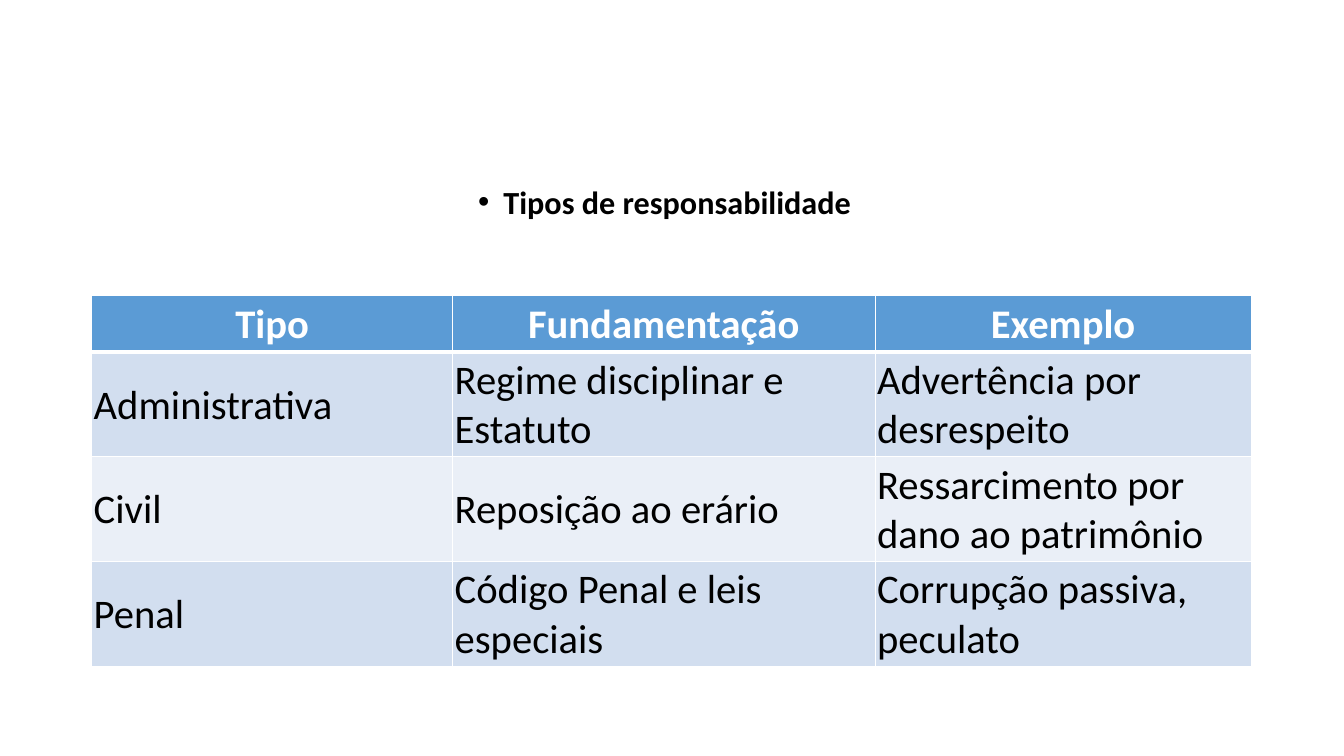
from lxml.etree import SubElement
from pptx import Presentation
from pptx.dml.color import RGBColor
from pptx.enum.text import MSO_ANCHOR as Anchor, PP_ALIGN as Align
from pptx.oxml.ns import qn
from pptx.util import Pt

PX = 9144
HEADING = "Tipos de responsabilidade"
RESPONSIBILITIES = [
    ["Tipo", "Fundamentação", "Exemplo"],
    ["Administrativa", "Regime disciplinar e Estatuto", "Advertência por desrespeito"],
    ["Civil", "Reposição ao erário", "Ressarcimento por dano ao patrimônio"],
    ["Penal", "Código Penal e leis especiais", "Corrupção passiva, peculato"],
]
COLUMN_WIDTHS = [358, 419, 373]
ROW_HEIGHTS = [56, 104, 104, 104]
HEADER_FILL, BAND_FILLS = "5B9BD5", ["EAEFF7", "D2DEEF"]
WHITE, BLACK = "FFFFFF", "000000"


def px(length):
    """Turn whole px into EMU."""
    return length * PX


def color(hex_code):
    """Turn a hex string into a colour."""
    return RGBColor.from_string(hex_code)


def apply(target, values):
    """Set each attribute of the target from a dict."""
    for key, value in values.items():
        setattr(target, key, value)


def style_font(paragraph, size, hex_code, bold):
    """Format the text of a paragraph."""
    apply(paragraph.font, {"name": "Calibri", "size": Pt(size), "bold": bold})
    paragraph.font.color.rgb = color(hex_code)


def add_border(cell, side, points):
    """Draw a white line on one side of a cell."""
    line = SubElement(cell._tc.get_or_add_tcPr(), qn(f"a:ln{side}"), w=str(Pt(points)))
    SubElement(SubElement(line, qn("a:solidFill")), qn("a:srgbClr"), val=WHITE)


def add_heading(slide, left, top, width, height):
    """Place the bulleted, centred heading in its box."""
    frame = slide.shapes.add_textbox(*map(px, (left, top, width, height))).text_frame
    apply(frame, {"word_wrap": True, "vertical_anchor": Anchor.MIDDLE})
    heading = frame.paragraphs[0]
    heading.text = HEADING
    properties = heading._p.get_or_add_pPr()
    apply_indent = {"marL": 0, "indent": px(-25)}
    for key, value in apply_indent.items():
        properties.set(key, str(value))
    SubElement(properties, qn("a:buFont"), typeface="Arial")
    SubElement(properties, qn("a:buChar"), char="•")
    apply(heading, {"alignment": Align.CENTER, "line_spacing": 0.9, "space_after": Pt(6)})
    style_font(heading, 23, BLACK, True)


def fill_cell(cell, text, row):
    """Write and format one cell according to its row."""
    is_header = row == 0
    apply(cell, {"text": text, "vertical_anchor": Anchor.MIDDLE, "margin_left": px(2),
                 "margin_right": px(2), "margin_top": px(2), "margin_bottom": 0})
    borders = {"L": 1, "R": 1, "T": 3 if row == 1 else 1, "B": 3 if is_header else 1}
    for side, points in borders.items():
        add_border(cell, side, points)
    cell.fill.solid()
    cell.fill.fore_color.rgb = color(HEADER_FILL if is_header else BAND_FILLS[row % 2])
    paragraph = cell.text_frame.paragraphs[0]
    paragraph.alignment = Align.CENTER if is_header else Align.LEFT
    style_font(paragraph, 29, WHITE if is_header else BLACK, is_header)


def add_responsibilities(slide, left, top):
    """Place the table of responsibilities from its top left corner."""
    size = sum(COLUMN_WIDTHS), sum(ROW_HEIGHTS)
    table = slide.shapes.add_table(len(ROW_HEIGHTS), len(COLUMN_WIDTHS),
                                   *map(px, (left, top, *size))).table
    for column, width in zip(table.columns, COLUMN_WIDTHS):
        column.width = px(width)
    for row, height in zip(table.rows, ROW_HEIGHTS):
        row.height = px(height)
    for row, texts in enumerate(RESPONSIBILITIES):
        for column, text in enumerate(texts):
            fill_cell(table.cell(row, column), text, row)


def main():
    """Build and save the slide."""
    deck = Presentation()
    apply(deck, {"slide_width": px(1333), "slide_height": px(750)})
    slide = deck.slides.add_slide(deck.slide_layouts[6])
    add_heading(slide, 110, 160, 1113, 84)
    add_responsibilities(slide, 91, 293)
    deck.save("out.pptx")


if __name__ == "__main__":
    main()
